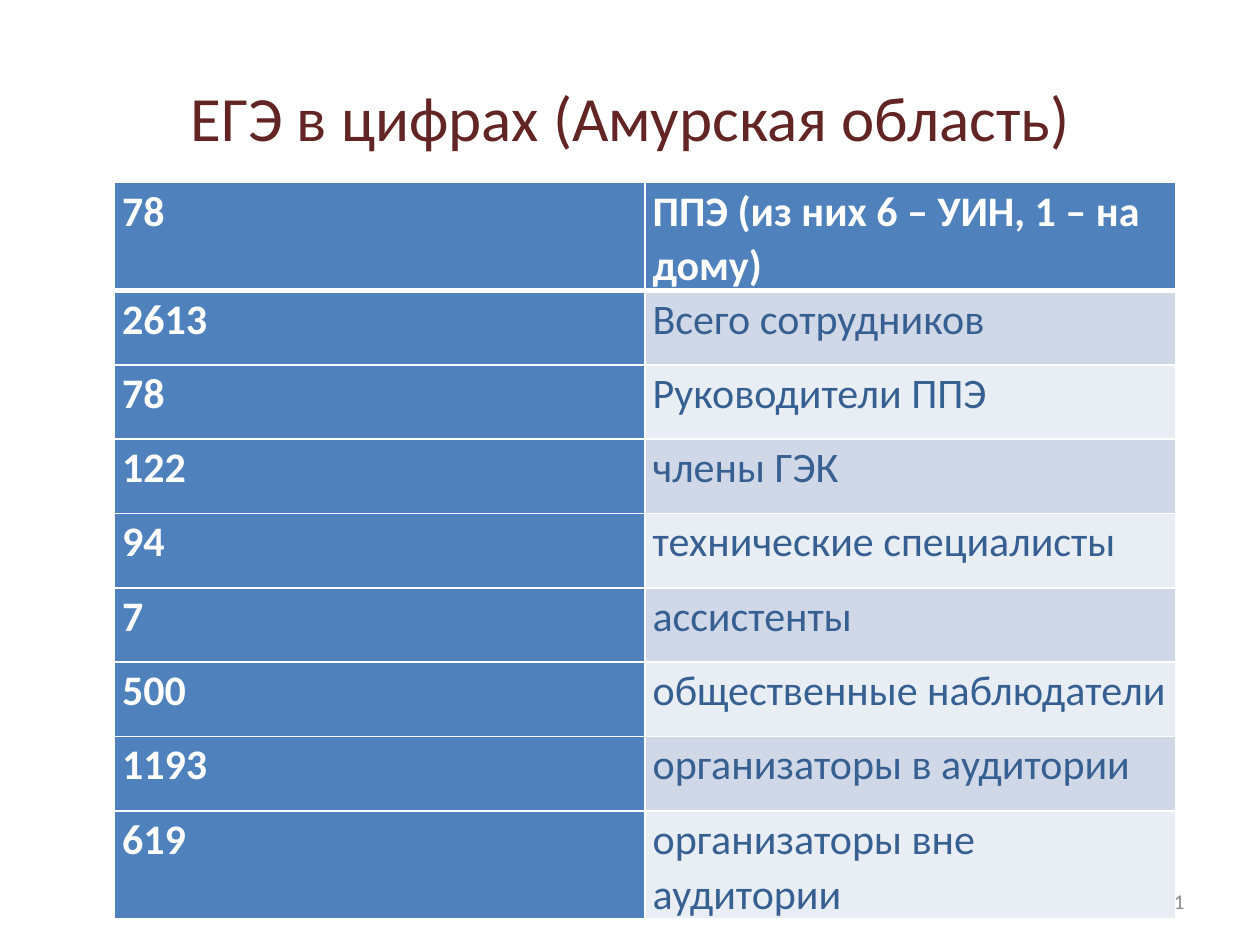
from dataclasses import dataclass

import pptx
import pptx.dml.color
import pptx.enum.text
import pptx.oxml
import pptx.oxml.ns
import pptx.util

Inches = pptx.util.Inches
Align = pptx.enum.text.PP_ALIGN
Anchor = pptx.enum.text.MSO_ANCHOR


@dataclass(frozen=True)
class Theme:
    font: str = "Calibri"
    title_color: str = "632523"
    number_color: str = "8C8C8C"
    strong_fill: str = "4F81BD"
    strong_text: str = "FFFFFF"
    label_text: str = "376092"
    bands: tuple = ("D0D8E8", "E9EDF4")
    border: str = "FFFFFF"
    title_size: int = 36
    table_size: int = 24
    number_size: int = 12
    border_width: int = 1
    header_rule: int = 3


def rgb(color):
    return pptx.dml.color.RGBColor.from_string(color)


class SlideBuilder:
    def __init__(self, slide, theme):
        self.slide = slide
        self.theme = theme

    def styled_text(self, frame, text, size, color, align, bold=False):
        frame.text = text
        frame.word_wrap = True
        paragraph = frame.paragraphs[0]
        paragraph.alignment = align
        for run in paragraph.runs:
            run.font.name = self.theme.font
            run.font.size = pptx.util.Pt(size)
            run.font.bold = bold
            run.font.color.rgb = rgb(color)
        return paragraph

    def title(self, text, left, top, width, height):
        heading = self.slide.shapes.title
        heading.left, heading.top = Inches(left), Inches(top)
        heading.width, heading.height = Inches(width), Inches(height)
        heading.text_frame.vertical_anchor = Anchor.MIDDLE
        self.styled_text(heading.text_frame, text, self.theme.title_size,
                         self.theme.title_color, Align.CENTER)

    def page_number(self, text, left, top, width, height):
        number = self.slide.shapes.add_textbox(
            Inches(left), Inches(top), Inches(width), Inches(height))
        number.text_frame.vertical_anchor = Anchor.MIDDLE
        self.styled_text(number.text_frame, text, self.theme.number_size,
                         self.theme.number_color, Align.RIGHT)

    def borders(self, cell, widths):
        properties = cell._tc.get_or_add_tcPr()
        for position, (side, width) in enumerate(widths.items()):
            properties.insert(position, pptx.oxml.parse_xml(
                f'<a:ln{side} {pptx.oxml.ns.nsdecls("a")} w="{pptx.util.Pt(width)}">'
                f'<a:solidFill><a:srgbClr val="{self.theme.border}"/></a:solidFill>'
                f'</a:ln{side}>'))

    def cell(self, cell, text, fill, color, bold):
        cell.margin_left = cell.margin_right = Inches(0.06)
        cell.margin_top = cell.margin_bottom = 0
        cell.fill.solid()
        cell.fill.fore_color.rgb = rgb(fill)
        paragraph = self.styled_text(cell.text_frame, text, self.theme.table_size,
                                     color, Align.LEFT, bold)
        paragraph.line_spacing = 1.07

    def table(self, records, left, top, column_width, row_height, last_height):
        theme = self.theme
        columns = len(records[0])
        heights = [row_height] * (len(records) - 1) + [last_height]
        grid = self.slide.shapes.add_table(
            len(records), columns, Inches(left), Inches(top),
            Inches(column_width * columns), Inches(sum(heights))).table
        for column in grid.columns:
            column.width = Inches(column_width)
        for row, (record, height) in enumerate(zip(records, heights)):
            grid.rows[row].height = Inches(height)
            for column, text in enumerate(record):
                strong = row == 0 or column == 0
                fill = theme.strong_fill if strong else theme.bands[(row - 1) % 2]
                color = theme.strong_text if strong else theme.label_text
                cell = grid.cell(row, column)
                self.cell(cell, text, fill, color, strong)
                widths = dict.fromkeys("LRTB", theme.border_width)
                if row == 0:
                    widths["B"] = theme.header_rule
                elif row == 1:
                    widths["T"] = theme.header_rule
                self.borders(cell, widths)


def main():
    exam_staff = [
        ("78", "ППЭ (из них 6 – УИН, 1 – на дому)"),
        ("2613", "Всего сотрудников"),
        ("78", "Руководители ППЭ"),
        ("122", "члены ГЭК"),
        ("94", "технические специалисты"),
        ("7", "ассистенты"),
        ("500", "общественные наблюдатели"),
        ("1193", "организаторы в аудитории"),
        ("619", "организаторы вне аудитории"),
    ]
    deck = pptx.Presentation()
    deck.slide_width, deck.slide_height = Inches(10), Inches(7.5)
    builder = SlideBuilder(deck.slides.add_slide(deck.slide_layouts[5]), Theme())
    builder.title("ЕГЭ в цифрах (Амурская область)", 0.5, 0.3, 9, 1.25)
    builder.page_number("11", 7.17, 6.95, 2.33, 0.4)
    builder.table(exam_staff, 0.91, 1.45, 4.21, 0.59, 0.55)
    deck.save("out.pptx")


if __name__ == "__main__":
    main()
